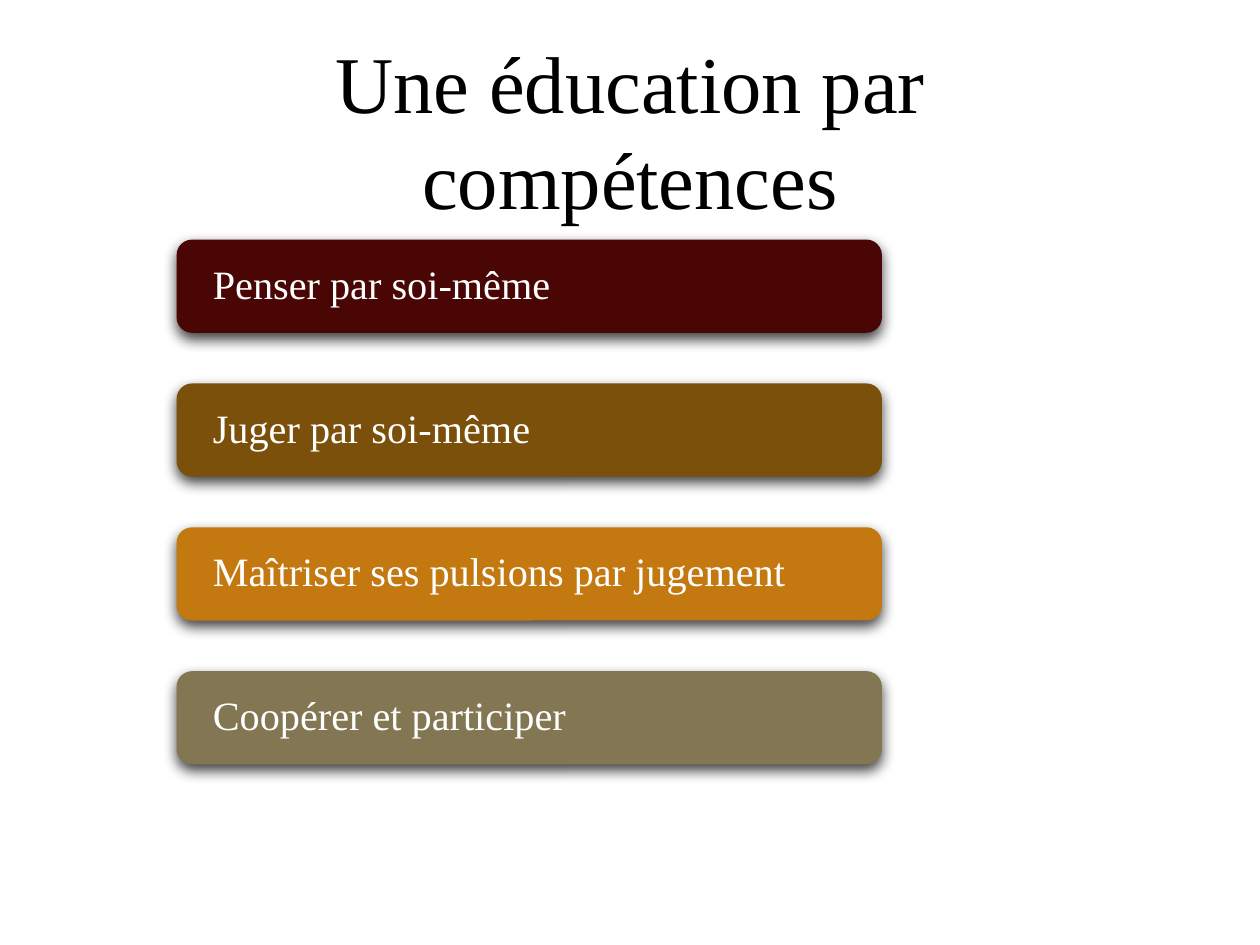
from lxml import etree
from pptx import Presentation
from pptx.dml.color import RGBColor
from pptx.enum.shapes import MSO_SHAPE
from pptx.enum.text import MSO_ANCHOR, PP_ALIGN
from pptx.oxml.ns import qn
from pptx.util import Cm, Pt


def rgb(value):
    return RGBColor.from_string(value)


class Deck:
    font = "Times New Roman"

    def __init__(self, prs):
        self.slide = prs.slides.add_slide(prs.slide_layouts[6])

    def set_text(self, sp, text, size, color, align, spacing):
        tf = sp.text_frame
        tf.text = text
        tf.word_wrap = True
        tf.vertical_anchor = MSO_ANCHOR.MIDDLE
        p = tf.paragraphs[0]
        p.alignment = align
        p.line_spacing = spacing
        r = p.runs[0]
        r.font.name = self.font
        r.font.size = Pt(size)
        r.font.color.rgb = rgb(color)
        return tf

    def title(self, text, x, y, w, h):
        sp = self.slide.shapes.add_textbox(Cm(x), Cm(y), Cm(w), Cm(h))
        self.set_text(sp, text, 46, "000000", PP_ALIGN.CENTER, Pt(55.4))

    def bar(self, text, color, x, y, w, h):
        sp = self.slide.shapes.add_shape(
            MSO_SHAPE.ROUNDED_RECTANGLE, Cm(x), Cm(y), Cm(w), Cm(h))
        sp.fill.solid()
        sp.fill.fore_color.rgb = rgb(color)
        sp.line.fill.background()
        self.add_shadow(sp)
        tf = self.set_text(sp, text, 23, "FFFFFF", PP_ALIGN.LEFT, 0.9)
        tf.margin_left = tf.margin_right = Cm(0.64)
        tf.margin_top = tf.margin_bottom = 0

    def add_shadow(self, sp):
        sp.shadow.inherit = False
        effects = sp._element.spPr.find(qn("a:effectLst"))
        outer = etree.SubElement(
            effects, qn("a:outerShdw"), blurRad=str(Pt(8)), dist=str(Pt(3)),
            dir="5400000", rotWithShape="0")
        clr = etree.SubElement(outer, qn("a:srgbClr"), val="000000")
        etree.SubElement(clr, qn("a:alpha"), val="75000")


def main():
    prs = Presentation()
    prs.slide_width, prs.slide_height = Cm(25.4), Cm(19.05)
    deck = Deck(prs)

    # Title
    deck.title("Une éducation par compétences", 2.54, 1.4, 20.32, 2.41)

    # Competence bars
    bars = [
        ("Penser par soi-même", "4A0505"),
        ("Juger par soi-même", "7A500A"),
        ("Maîtriser ses pulsions par jugement", "C47810"),
        ("Coopérer et participer", "827752"),
    ]
    for i, (text, color) in enumerate(bars):
        deck.bar(text, color, 3.56, 4.83 + 2.9 * i, 14.22, 1.88)

    prs.save("out.pptx")


if __name__ == "__main__":
    main()
